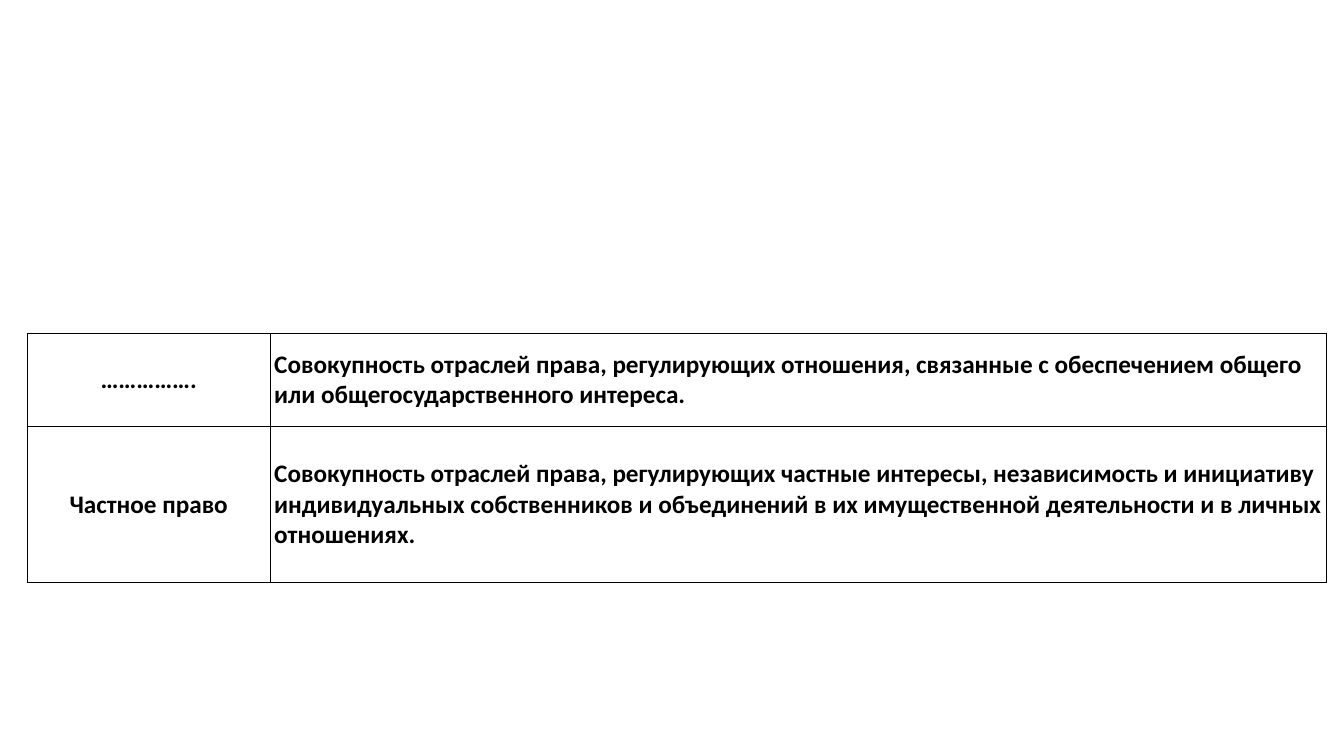
from lxml.etree import SubElement
from pptx import Presentation
from pptx.dml.color import RGBColor
from pptx.enum.text import MSO_ANCHOR, PP_ALIGN
from pptx.oxml.ns import qn
from pptx.util import Inches, Pt

BLACK = "000000"
WHITE = "FFFFFF"
COLUMN_WIDTHS = [2.41, 10.48]
ROW_HEIGHTS = [0.92, 1.55]
ALIGNMENTS = [PP_ALIGN.CENTER, PP_ALIGN.LEFT]
LAW_BRANCHES = [
    ("…………….",
     "Совокупность отраслей права, регулирующих отношения, связанные с "
     "обеспечением общего или общегосударственного интереса."),
    ("Частное право",
     "Совокупность отраслей права, регулирующих частные интересы, "
     "независимость и инициативу индивидуальных собственников и объединений "
     "в их имущественной деятельности и в личных отношениях."),
]


def paint(color_format, value):
    """Set a colour format from a hex string."""
    color_format.rgb = RGBColor.from_string(value)


def add_borders(cell, value, width):
    """Draw a solid line on all four sides of a cell."""
    properties = cell._tc.get_or_add_tcPr()
    for side in ("a:lnL", "a:lnR", "a:lnT", "a:lnB"):
        line = SubElement(properties, qn(side), w=str(Pt(width)))
        fill = SubElement(line, qn("a:solidFill"))
        SubElement(fill, qn("a:srgbClr"), val=value)


def fill_cell(cell, wording, alignment):
    """Write and format the text, borders and fill of a cell."""
    add_borders(cell, BLACK, 1)
    cell.fill.solid()
    paint(cell.fill.fore_color, WHITE)
    cell.vertical_anchor = MSO_ANCHOR.MIDDLE
    cell.margin_left = cell.margin_right = Inches(0.04)
    cell.margin_top = cell.margin_bottom = Inches(0.04)
    cell.text_frame.text = wording
    paragraph = cell.text_frame.paragraphs[0]
    paragraph.alignment = alignment
    font = paragraph.runs[0].font
    font.name = "Calibri"
    font.size = Pt(18)
    font.bold = True
    paint(font.color, BLACK)


def add_law_table(slide):
    """Add the table of law branches and their definitions."""
    table = slide.shapes.add_table(
        len(ROW_HEIGHTS), len(COLUMN_WIDTHS), Inches(0.27), Inches(3.31),
        Inches(sum(COLUMN_WIDTHS)), Inches(sum(ROW_HEIGHTS))).table
    table.first_row = False
    table.horz_banding = False
    for column, width in zip(table.columns, COLUMN_WIDTHS):
        column.width = Inches(width)
    for row, height, wordings in zip(table.rows, ROW_HEIGHTS, LAW_BRANCHES):
        row.height = Inches(height)
        for cell, wording, alignment in zip(row.cells, wordings, ALIGNMENTS):
            fill_cell(cell, wording, alignment)


def main():
    """Build and save the slide."""
    presentation = Presentation()
    presentation.slide_width = Inches(13.33)
    presentation.slide_height = Inches(7.5)
    slide = presentation.slides.add_slide(presentation.slide_layouts[6])
    add_law_table(slide)
    presentation.save("out.pptx")


if __name__ == "__main__":
    main()
